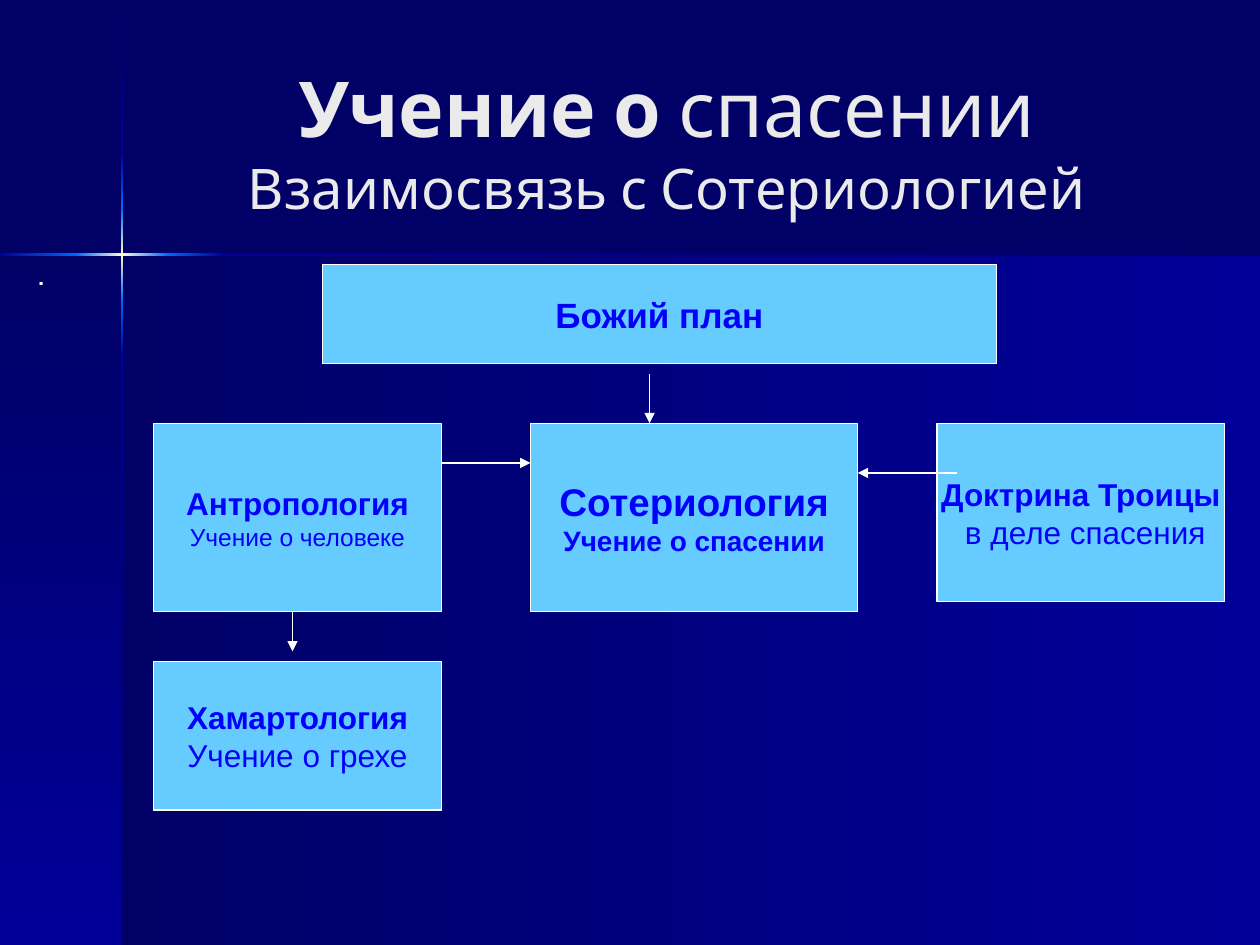
from collections import namedtuple

from lxml import etree
from pptx import Presentation
from pptx.dml.color import RGBColor
from pptx.enum.shapes import MSO_CONNECTOR, MSO_SHAPE
from pptx.enum.text import MSO_ANCHOR, PP_ALIGN
from pptx.oxml.ns import qn
from pptx.util import Inches, Pt

RECTANGLE = MSO_SHAPE.RECTANGLE
STRAIGHT = MSO_CONNECTOR.STRAIGHT
CENTER, MIDDLE, TOP = PP_ALIGN.CENTER, MSO_ANCHOR.MIDDLE, MSO_ANCHOR.TOP

SLIDE_W, SLIDE_H = 10, 7.5
TITLE_ONLY = 5
NIGHT, NAVY, BRIGHT, GLOW = "000066", "000099", "0066FF", "FFFFCC"
SKY, BLUE, WHITE, PALE = "66CCFF", "0000FF", "FFFFFF", "EAEAEA"
RIGHTWARD, DOWNWARD = 0, 90

Box = namedtuple("Box", "left top width height")


def rgb(value):
    return RGBColor.from_string(value)


def inches(box):
    return [Inches(length) for length in box]


def add_run(paragraph, text, size, color, font, bold=False):
    run = paragraph.add_run()
    run.text = text
    run.font.size, run.font.name, run.font.bold = Pt(size), font, bold
    run.font.color.rgb = rgb(color)


def add_gradient(slide, box, colors, angle):
    """Borderless rectangle with evenly spaced gradient stops."""
    band = slide.shapes.add_shape(RECTANGLE, *inches(box))
    band.shadow.inherit = False
    band.line.fill.background()
    band.fill.gradient()
    gradient = band._element.spPr.find(qn("a:gradFill"))
    stops = gradient.find(qn("a:gsLst"))
    for stop in list(stops):
        stops.remove(stop)
    for i, color in enumerate(colors):
        position = str(100000 * i // (len(colors) - 1))
        stop = etree.SubElement(stops, qn("a:gs"), pos=position)
        etree.SubElement(stop, qn("a:srgbClr"), val=color)
    gradient.find(qn("a:lin")).set("ang", str(angle * 60000))


def add_backdrop(slide, box, cross_x, cross_y):
    """Two shaded panels and a glowing cross where they meet."""
    slide.background.fill.solid()
    slide.background.fill.fore_color.rgb = rgb(NIGHT)
    right, bottom = box.left + box.width, box.top + box.height
    panel_h = bottom - cross_y
    add_gradient(slide, Box(cross_x, cross_y, right - cross_x, panel_h), (NIGHT, NAVY), RIGHTWARD)
    add_gradient(slide, Box(box.left, cross_y, cross_x - box.left, panel_h), (NIGHT, NAVY), DOWNWARD)

    thick, core, fade = 0.02, 0.73, 0.44
    near, far = core / 2, core / 2 + fade

    # Vertical beam, from top to bottom
    beam = [
        (box.top, cross_y - far, (NIGHT, NAVY)),
        (cross_y - far, cross_y - near, (NAVY, BRIGHT)),
        (cross_y - near, cross_y + near, (BRIGHT, GLOW, BRIGHT)),
        (cross_y + near, cross_y + far, (BRIGHT, NAVY)),
        (cross_y + far, bottom, (NAVY, NIGHT)),
    ]
    for start, end, colors in beam:
        add_gradient(slide, Box(cross_x - thick / 2, start, thick, end - start), colors, DOWNWARD)

    # Horizontal beam, from left to right
    beam = [
        (box.left, cross_x - near, (NAVY, BRIGHT)),
        (cross_x - near, cross_x + near, (BRIGHT, GLOW, BRIGHT)),
        (cross_x + near, cross_x + far, (BRIGHT, NAVY)),
        (cross_x + far, right, (NAVY, NIGHT)),
    ]
    for start, end, colors in beam:
        add_gradient(slide, Box(start, cross_y - thick / 2, end - start, thick), colors, RIGHTWARD)


def add_title(slide, box):
    title = slide.shapes.title
    title.left, title.top, title.width, title.height = inches(box)
    frame = title.text_frame
    frame.word_wrap, frame.vertical_anchor = True, MIDDLE
    heading = frame.paragraphs[0]
    heading.alignment = CENTER
    add_run(heading, "Учение о ", 44, PALE, "Cabin", True)
    add_run(heading, "спасении", 44, PALE, "Cabin")
    heading.add_line_break()
    add_run(heading, "Взаимосвязь с Сотериологией", 32, PALE, "Cabin")


def add_body(slide, box):
    frame = slide.shapes.add_textbox(*inches(box)).text_frame
    frame.word_wrap, frame.vertical_anchor = True, TOP
    point = frame.paragraphs[0]
    point.space_before = Pt(4)
    add_run(point, ".", 20, WHITE, "Cabin")


def add_node(slide, box, lines):
    node = slide.shapes.add_shape(RECTANGLE, *inches(box))
    node.shadow.inherit = False
    node.fill.solid()
    node.fill.fore_color.rgb = rgb(SKY)
    node.line.color.rgb = rgb(WHITE)
    node.line.width = Pt(0.75)
    frame = node.text_frame
    frame.word_wrap, frame.vertical_anchor = False, MIDDLE
    for i, (text, size, bold) in enumerate(lines):
        paragraph = frame.add_paragraph() if i else frame.paragraphs[0]
        paragraph.alignment = CENTER
        add_run(paragraph, text, size, BLUE, "Arial", bold)


def add_arrow(slide, start, end):
    arrow = slide.shapes.add_connector(STRAIGHT, *inches(start + end))
    arrow.line.color.rgb = rgb(WHITE)
    arrow.line.width = Pt(0.75)
    etree.SubElement(arrow.line._get_or_add_ln(), qn("a:tailEnd"), type="triangle")
    etree.SubElement(arrow._element.spPr, qn("a:effectLst"))


def add_diagram(slide, box):
    """Doctrines on a grid of 108 columns and 55 rows."""
    column, row = box.width / 108, box.height / 55

    def point(x, y):
        return box.left + x * column, box.top + y * row

    # Doctrines: column, row, columns wide, rows high, lines
    nodes = [
        (17, 0, 68, 10, [("Божий план", 20, True)]),
        (38, 16, 33, 19, [("Сотериология", 22, True), ("Учение о спасении", 16, True)]),
        (0, 40, 29, 15, [("Хамартология", 18, True), ("Учение о грехе", 18, False)]),
        (79, 16, 29, 18, [("Доктрина Троицы", 18, True), (" в деле спасения", 18, False)]),
        (0, 16, 29, 19, [("Антропология", 18, True), ("Учение о человеке", 14, False)]),
    ]
    for x, y, columns, rows, lines in nodes:
        add_node(slide, Box(*point(x, y), columns * column, rows * row), lines)

    # Links between doctrines
    links = [
        ((50, 11), (50, 16)),
        ((29, 20), (38, 20)),
        ((81, 21), (71, 21)),
        ((14, 35), (14, 39)),
    ]
    for start, end in links:
        add_arrow(slide, point(*start), point(*end))


def main():
    deck = Presentation()
    deck.slide_width, deck.slide_height = Inches(SLIDE_W), Inches(SLIDE_H)
    slide = deck.slides.add_slide(deck.slide_layouts[TITLE_ONLY])
    add_backdrop(slide, Box(0, 0, SLIDE_W, SLIDE_H), cross_x=0.97, cross_y=2.02)
    add_title(slide, Box(1.17, 0.33, 8.25, 1.57))
    add_body(slide, Box(0.2, 1.94, 9.69, 5.43))
    add_diagram(slide, Box(1.22, 2.1, 8.5, 4.33))
    deck.save("out.pptx")


if __name__ == "__main__":
    main()
